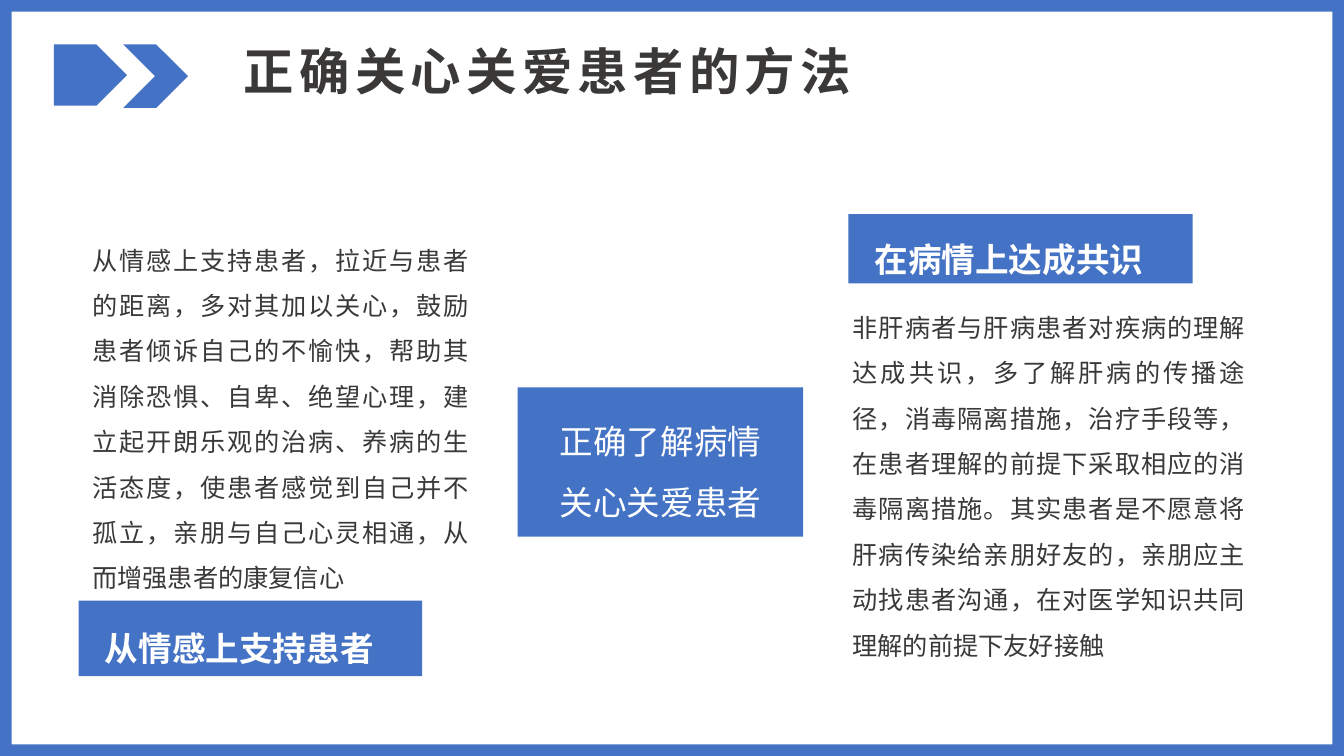
"""Build the slide on the right ways to care for patients."""
from dataclasses import dataclass

from lxml.etree import SubElement
from pptx import Presentation
from pptx.dml.color import RGBColor
from pptx.enum.shapes import MSO_SHAPE
from pptx.enum.text import MSO_ANCHOR, MSO_AUTO_SIZE, PP_ALIGN
from pptx.oxml.ns import qn
from pptx.shapes.autoshape import Shape
from pptx.slide import Slide
from pptx.util import Pt

SCALE = 9525
WIDE, HIGH, EDGE = 1280, 720, 11


@dataclass(frozen=True)
class Theme:
    """Hold the colours, font and type sizes."""
    blue: str = "4472C4"
    white: str = "FFFFFF"
    dark: str = "3B3838"
    font: str = "Noto Sans CJK SC"
    head: int = 36
    label: int = 24
    body: int = 18


THEME = Theme()


@dataclass(frozen=True)
class Style:
    """Describe how a block of text is set."""
    size: int
    color: str
    bold: bool = False
    align: PP_ALIGN = PP_ALIGN.LEFT
    anchor: MSO_ANCHOR = MSO_ANCHOR.TOP
    lead: float = 1.5
    track: int = 0
    pad: tuple[int, int] = (25, 13)


@dataclass(frozen=True)
class Block:
    """Describe a rectangle or other preset, with or without text."""
    box: tuple[int, int, int, int]
    fill: str = ""
    text: str = ""
    style: Style | None = None
    kind: MSO_SHAPE = MSO_SHAPE.RECTANGLE
    edge: bool = False


HEAD = Style(THEME.head, THEME.dark, bold=True, lead=1.0, track=380, pad=(10, 5))
CORE = Style(THEME.label, THEME.white, align=PP_ALIGN.CENTER)
BODY = Style(THEME.body, THEME.dark, align=PP_ALIGN.JUSTIFY)
LABEL = Style(THEME.label, THEME.white, bold=True, anchor=MSO_ANCHOR.MIDDLE)

BLOCKS = (
    Block((0, 0, WIDE, HIGH), THEME.blue),
    Block((EDGE, EDGE, WIDE - 2 * EDGE, HIGH - 2 * EDGE), THEME.white),
    Block((119, 43, 59, 59), THEME.blue, kind=MSO_SHAPE.CHEVRON, edge=True),
    Block((52, 43, 68, 57), THEME.blue, kind=MSO_SHAPE.PENTAGON, edge=True),
    Block((493, 369, 272, 142), THEME.blue, "正确了解病情\n关心关爱患者", CORE),
    Block((63, 206, 409, 142), "",
          "从情感上支持患者，拉近与患者的距离，多对其加以关心，鼓励患者倾诉自己的不愉快，"
          "帮助其消除恐惧、自卑、绝望心理，建立起开朗乐观的治病、养病的生活态度，"
          "使患者感觉到自己并不孤立，亲朋与自己心灵相通，从而增强患者的康复信心", BODY),
    Block((787, 270, 424, 142), "",
          "非肝病者与肝病患者对疾病的理解达成共识，多了解肝病的传播途径，消毒隔离措施，"
          "治疗手段等，在患者理解的前提下采取相应的消毒隔离措施。"
          "其实患者是不愿意将肝病传染给亲朋好友的，亲朋应主动找患者沟通，"
          "在对医学知识共同理解的前提下友好接触", BODY),
    Block((75, 572, 327, 72), THEME.blue, "从情感上支持患者", LABEL),
    Block((808, 204, 328, 66), THEME.blue, "在病情上达成共识", LABEL),
)


def assign(item: object, values: dict[str, object]) -> None:
    """Set each named attribute on the item."""
    for name, value in values.items():
        setattr(item, name, value)


def place(shape: Shape, box: tuple[int, int, int, int]) -> None:
    """Move and size a shape in px."""
    names = ("left", "top", "width", "height")
    assign(shape, {name: px * SCALE for name, px in zip(names, box)})


def write(shape: Shape, text: str, style: Style) -> None:
    """Fill a shape with text, one paragraph a line."""
    frame = shape.text_frame
    side, end = (px * SCALE for px in style.pad)
    frame.text = text
    assign(frame, {
        "word_wrap": True, "auto_size": MSO_AUTO_SIZE.NONE,
        "vertical_anchor": style.anchor,
        "margin_left": side, "margin_right": side,
        "margin_top": end, "margin_bottom": end,
    })
    for para in frame.paragraphs:
        assign(para, {"alignment": style.align, "line_spacing": style.lead})
        para._p.get_or_add_pPr().set("hangingPunct", "0")
        for run in para.runs:
            run.font.color.rgb = RGBColor.from_string(style.color)
            assign(run.font, {
                "name": THEME.font, "size": Pt(style.size), "bold": style.bold,
            })
            props = run.font._element
            SubElement(props, qn("a:ea"), typeface=THEME.font)
            if style.track:
                props.set("spc", str(style.track))


def draw(slide: Slide, block: Block) -> None:
    """Add one block to the slide."""
    if block.fill:
        shape = slide.shapes.add_shape(block.kind, 0, 0, 0, 0)
        shape.shadow.inherit = False
        shape.fill.solid()
        shape.fill.fore_color.rgb = RGBColor.from_string(block.fill)
        if block.edge:
            shape.line.color.rgb = RGBColor.from_string(block.fill)
            shape.line.width = Pt(1)
            SubElement(shape.line._get_or_add_ln(), qn("a:miter"), lim="800000")
        else:
            shape.line.fill.background()
    else:
        shape = slide.shapes.add_textbox(0, 0, 0, 0)
    place(shape, block.box)
    if block.style:
        write(shape, block.text, block.style)


def main() -> None:
    """Build and save the deck."""
    deck = Presentation()
    assign(deck, {"slide_width": WIDE * SCALE, "slide_height": HIGH * SCALE})
    slide = deck.slides.add_slide(deck.slide_layouts[5])
    for block in BLOCKS:
        draw(slide, block)
    title = slide.shapes.title
    place(title, (222, 33, 626, 67))
    write(title, "正确关心关爱患者的方法", HEAD)
    title._element.getparent().append(title._element)
    deck.save("out.pptx")


if __name__ == "__main__":
    main()
